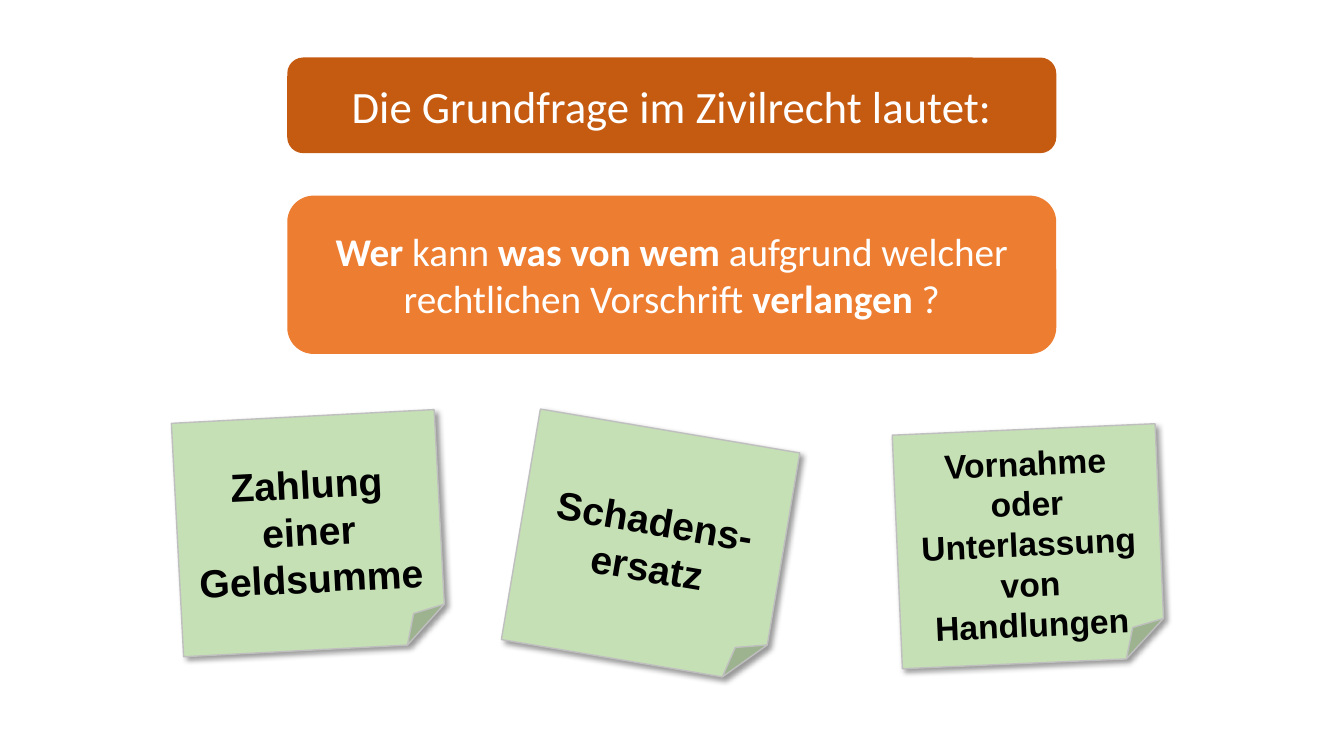
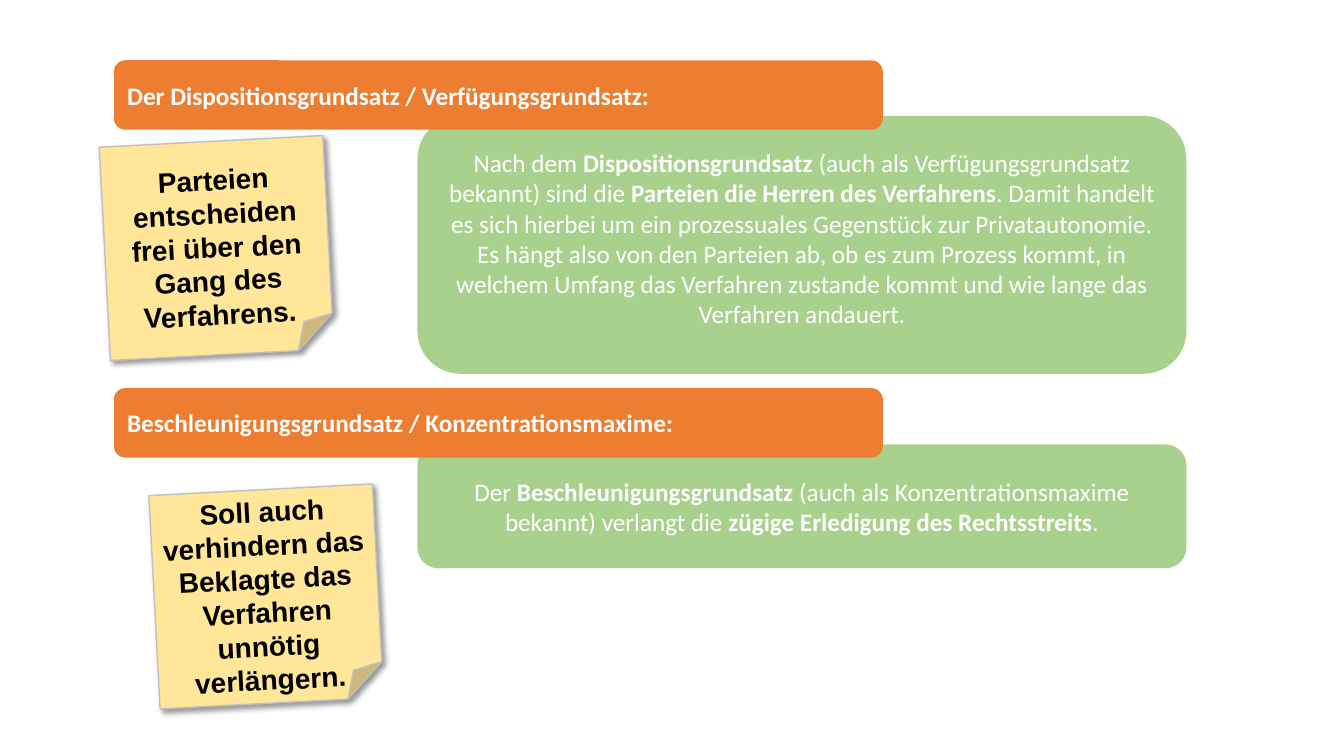
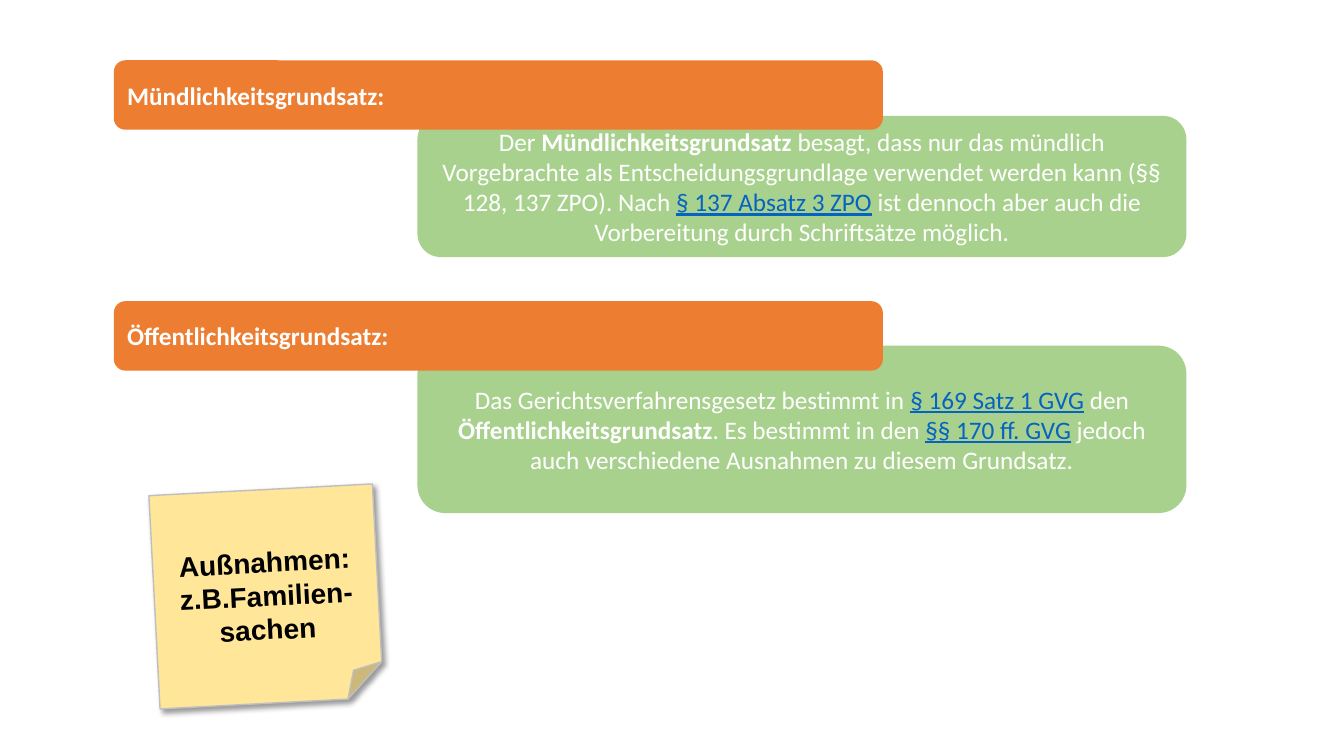
from lxml.etree import SubElement
from pptx import Presentation
from pptx.dml.color import RGBColor as Rgb
from pptx.enum.shapes import MSO_SHAPE as Kind
from pptx.enum.text import MSO_ANCHOR as Anchor, PP_ALIGN as Align
from pptx.oxml.ns import qn
from pptx.util import Cm, Pt

WHITE, BLACK, LINK = "FFFFFF", "000000", "0563C1"
RUST, ORANGE, LEAF = "C55A11", "ED7D31", "A9D18E"
MINT, CREAM, GREY = "C5E0B4", "FFE699", "BFBFBF"


def paint(target, code):
    if hasattr(target, "solid"):
        target.solid()
        target = target.fore_color
    target.rgb = Rgb.from_string(code)


class Deck:
    wide = 19.38
    bar_left, bar_high = 2.87, 1.75
    body_left = 10.52

    def __init__(self):
        self.prs = Presentation()
        self.prs.slide_width, self.prs.slide_height = Cm(33.87), Cm(19.05)
        self.slide = None

    def page(self):
        self.slide = self.prs.slides.add_slide(self.prs.slide_layouts[6])

    def shape(self, kind, box, fill):
        item = self.slide.shapes.add_shape(kind, *map(Cm, box))
        item.shadow.inherit = False
        paint(item.fill, fill)
        item.line.fill.background()
        return item

    def label(self, item, text, size, font="Calibri", color=WHITE, bold=False, align=Align.CENTER):
        frame = item.text_frame
        frame.word_wrap = True
        frame.vertical_anchor = Anchor.MIDDLE
        for i, line in enumerate(text.split("\n")):
            para = frame.add_paragraph() if i else frame.paragraphs[0]
            para.alignment = align
            for part in line.split("|"):
                run = para.add_run()
                run.text = part.lstrip("*_")
                link = part.startswith("_")
                run.font.name, run.font.size = font, Pt(size)
                run.font.bold = bold or part.startswith("*")
                run.font.underline = link
                paint(run.font.color, LINK if link else color)

    def panel(self, left, top, high, fill, text, size, **style):
        item = self.shape(Kind.ROUNDED_RECTANGLE, (left, top, self.wide, high), fill)
        self.label(item, text, size, **style)
        return item

    def body(self, top, high, text):
        return self.panel(self.body_left, top, high, LEAF, text, 18)

    def bar(self, top, text):
        self.panel(self.bar_left, top, self.bar_high, ORANGE, text, 18, bold=True, align=Align.LEFT)

    def note(self, box, turn, fill, text, size):
        item = self.shape(Kind.FOLDED_CORNER, box, fill)
        item.rotation = turn
        paint(item.line.fill, GREY)
        item.line.width = Pt(1)
        glow = item._element.spPr.find(qn("a:effectLst"))
        shade = SubElement(glow, qn("a:outerShdw"), blurRad=str(Pt(4)), dist=str(Pt(3)),
                           dir="2700000", algn="tl", rotWithShape="0")
        tint = SubElement(shade, qn("a:srgbClr"), val=BLACK)
        SubElement(tint, qn("a:alpha"), val="40000")
        item.text_frame.margin_top = Cm(0.95)
        self.label(item, text, size, font="Arial", color=BLACK, bold=True)

    def mint(self, left, top, turn, text, size=28):
        self.note((left, top, 6.63, 5.89), turn, MINT, text, size)

    def cream(self, left, top, text):
        self.note((left, top, 5.64, 5.38), 357, CREAM, text, 20)


def main():
    deck = Deck()

    deck.page()
    deck.panel(7.24, 1.45, 2.41, RUST, "Die Grundfrage im Zivilrecht lautet:", 32)
    deck.panel(7.24, 4.93, 3.99, ORANGE,
               "*Wer| kann |*was von wem |aufgrund welcher rechtlichen Vorschrift |*verlangen| ?", 28)
    deck.mint(4.47, 10.49, 357, "Zahlung einer Geldsumme")
    deck.mint(22.61, 10.82, 357.5, "Vornahme oder Unterlassung von Handlungen", 24)
    deck.mint(13.08, 10.82, 9.6, "Schadens-\nersatz")

    deck.page()
    deck.body(11.2, 3.12, "Der |*Beschleunigungsgrundsatz| (auch als Konzentrationsmaxime bekannt) "
              "verlangt die |*zügige Erledigung des Rechtsstreits|.")
    rule = deck.body(2.92, 6.5, "Nach dem |*Dispositionsgrundsatz| (auch als Verfügungsgrundsatz bekannt) "
                     "sind die|* Parteien die Herren des Verfahrens|. Damit handelt es sich hierbei um ein "
                     "prozessuales Gegenstück zur Privatautonomie. Es hängt also von den Parteien ab, "
                     "ob es zum Prozess kommt, in welchem Umfang das Verfahren zustande kommt und "
                     "wie lange das Verfahren andauert.")
    rule.text_frame.margin_bottom = Cm(0.46)
    deck.bar(1.52, "Der Dispositionsgrundsatz / Verfügungsgrundsatz:")
    deck.bar(9.78, "Beschleunigungsgrundsatz / Konzentrationsmaxime:")
    deck.cream(2.64, 3.56, "Parteien entscheiden frei über den Gang des Verfahrens.")
    deck.cream(3.89, 12.34, "Soll auch verhindern das Beklagte das Verfahren unnötig verlängern.")

    deck.page()
    deck.body(8.71, 4.22, "Das Gerichtsverfahrensgesetz bestimmt in |_§ 169 Satz 1 GVG| den "
              "|*Öffentlichkeitsgrundsatz|. Es bestimmt in den |_§§ 170 ff. GVG| jedoch auch "
              "verschiedene Ausnahmen zu diesem Grundsatz.")
    deck.body(2.92, 3.56, "Der |*Mündlichkeitsgrundsatz| besagt, dass nur das mündlich Vorgebrachte als "
              "Entscheidungsgrundlage verwendet werden kann (§§ 128, 137 ZPO). Nach "
              "|_§ 137 Absatz 3 ZPO| ist dennoch aber auch die Vorbereitung durch Schriftsätze möglich.")
    deck.bar(1.52, "Mündlichkeitsgrundsatz:")
    deck.bar(7.59, "Öffentlichkeitsgrundsatz:")
    deck.cream(3.89, 12.34, "Außnahmen:\nz.B.Familien-sachen")

    deck.prs.save("out.pptx")


if __name__ == "__main__":
    main()
